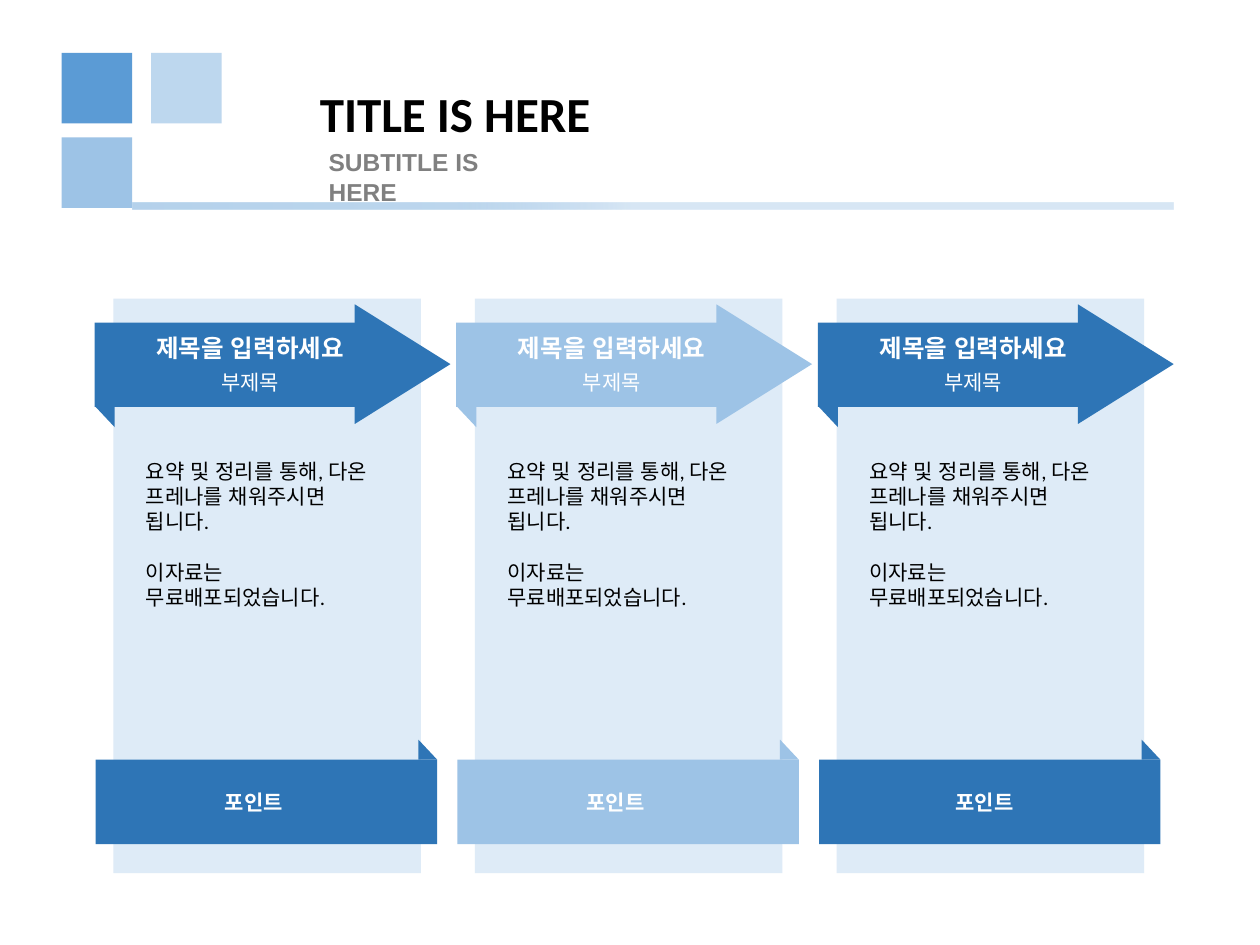
from dataclasses import dataclass

from pptx import Presentation
from pptx.dml.color import RGBColor
from pptx.enum.lang import MSO_LANGUAGE_ID
from pptx.enum.shapes import MSO_SHAPE
from pptx.enum.text import PP_ALIGN
from pptx.oxml import parse_xml
from pptx.oxml.ns import nsdecls, qn
from pptx.shapes.autoshape import Shape
from pptx.slide import Slide
from pptx.util import Inches, Length, Pt

GRID_COLUMNS, GRID_ROWS = 1000, 750
CELL = Inches(0.01)
FIRST_STEP, STEP_PITCH = 75, 287
DARK, MEDIUM, PALE, PANEL = "2E75B6", "9DC3E6", "BDD7EE", "DEEBF7"
WHITE, BLACK, GRAY = "FFFFFF", "000000", "808080"


@dataclass(frozen=True)
class Area:
    column: int
    row: int
    columns: int
    rows: int

    def shifted(self, columns: int) -> "Area":
        return Area(self.column + columns, self.row, self.columns, self.rows)

    def lengths(self) -> list[Length]:
        return [CELL * count for count in (self.column, self.row, self.columns, self.rows)]


@dataclass(frozen=True)
class Part:
    kind: MSO_SHAPE
    area: Area
    rotation: int = 0


@dataclass(frozen=True)
class Step:
    color: str
    title: str = "제목을 입력하세요"
    subtitle: str = "부제목"
    body: tuple[str, ...] = ("요약 및 정리를 통해, 다온", "프레나를 채워주시면 됩니다.", "이자료는 무료배포되었습니다.")
    point: str = "포인트"
    point_shift: int = 0


PANEL_AREA = Area(15, 237, 244, 456)
RIBBON_PARTS = (
    Part(MSO_SHAPE.RECTANGLE, Area(1, 603, 271, 67)),
    Part(MSO_SHAPE.RIGHT_TRIANGLE, Area(257, 587, 15, 16)),
    Part(MSO_SHAPE.RECTANGLE, Area(0, 256, 207, 67), 180),
    Part(MSO_SHAPE.RIGHT_TRIANGLE, Area(1, 323, 15, 16), 180),
    Part(MSO_SHAPE.ISOSCELES_TRIANGLE, Area(197, 251, 95, 76), 90),
)
STEPS = (Step(DARK), Step(MEDIUM), Step(DARK, point_shift=6))
SQUARES = (
    (Area(120, 42, 56, 56), PALE),
    (Area(49, 42, 56, 56), "5B9BD5"),
    (Area(49, 109, 56, 56), MEDIUM),
)
RULE_STOPS = ((0, "B5D2EC", 100), (31, PALE, 100), (48, MEDIUM, 40), (66, MEDIUM, 40))


def rgb(color: str) -> RGBColor:
    return RGBColor.from_string(color)


def draw_part(page: Slide, part: Part, color: str) -> Shape:
    shape = page.shapes.add_shape(part.kind, *part.area.lengths())
    shape.rotation = part.rotation
    shape.shadow.inherit = False
    shape.fill.solid()
    shape.fill.fore_color.rgb = rgb(color)
    shape.line.fill.background()
    return shape


def draw_text(
    page: Slide,
    area: Area,
    *texts: str,
    size: int,
    color: str,
    font: str = "Calibri",
    bold: bool = False,
    wrap: bool = True,
    align: PP_ALIGN = PP_ALIGN.LEFT,
    gap_before_last: float = 0,
    language: MSO_LANGUAGE_ID = MSO_LANGUAGE_ID.KOREAN,
) -> None:
    frame = page.shapes.add_textbox(*area.lengths()).text_frame
    frame.word_wrap = wrap
    for index, text in enumerate(texts):
        para = frame.add_paragraph() if index else frame.paragraphs[0]
        para.alignment = align
        span = para.add_run()
        span.text = text
        span.font.name = font
        span.font.size = Pt(size)
        span.font.bold = bold
        span.font.color.rgb = rgb(color)
        span.font.language_id = language
    if gap_before_last:
        para.space_before = Pt(gap_before_last)


def draw_rule(page: Slide) -> None:
    rule = draw_part(page, Part(MSO_SHAPE.RECTANGLE, Area(105, 161, 826, 5), 180), PALE)
    stops = "".join(
        f'<a:gs pos="{position * 1000}"><a:srgbClr val="{color}">'
        f'<a:alpha val="{opacity * 1000}"/></a:srgbClr></a:gs>'
        for position, color, opacity in RULE_STOPS
    )
    gradient = parse_xml(
        f'<a:gradFill {nsdecls("a")} rotWithShape="1"><a:gsLst>{stops}</a:gsLst>'
        '<a:lin ang="10800000" scaled="0"/></a:gradFill>'
    )
    properties = rule.element.spPr
    properties.replace(properties.find(qn("a:solidFill")), gradient)


def draw_header(page: Slide) -> None:
    for area, color in SQUARES:
        draw_part(page, Part(MSO_SHAPE.RECTANGLE, area), color)
    draw_rule(page)
    english = MSO_LANGUAGE_ID.ENGLISH_US
    draw_text(page, Area(244, 61, 237, 57), "TITLE IS HERE",
              size=28, color=BLACK, bold=True, wrap=False, language=english)
    draw_text(page, Area(251, 112, 187, 34), "SUBTITLE IS HERE",
              size=14, color=GRAY, font="Arial", bold=True, language=english)


def draw_step(page: Slide, step: Step, left: int) -> None:
    draw_part(page, Part(MSO_SHAPE.RECTANGLE, PANEL_AREA.shifted(left)), PANEL)
    for part in RIBBON_PARTS:
        draw_part(page, Part(part.kind, part.area.shifted(left), part.rotation), step.color)
    draw_text(page, Area(31, 359, 207, 131).shifted(left), *step.body,
              size=12, color=BLACK, gap_before_last=14.4)
    draw_text(page, Area(6, 259, 235, 34).shifted(left), step.title,
              size=14, color=WHITE, bold=True, align=PP_ALIGN.CENTER)
    draw_text(page, Area(6, 288, 235, 30).shifted(left), step.subtitle,
              size=12, color=WHITE, align=PP_ALIGN.CENTER)
    draw_text(page, Area(41 + step.point_shift, 622, 171, 30).shifted(left), step.point,
              size=12, color=WHITE, bold=True, align=PP_ALIGN.CENTER)


def main() -> None:
    deck = Presentation()
    deck.slide_width = CELL * GRID_COLUMNS
    deck.slide_height = CELL * GRID_ROWS
    page = deck.slides.add_slide(deck.slide_layouts[6])
    draw_header(page)
    for index, step in enumerate(STEPS):
        draw_step(page, step, FIRST_STEP + index * STEP_PITCH)
    deck.save("out.pptx")


if __name__ == "__main__":
    main()
